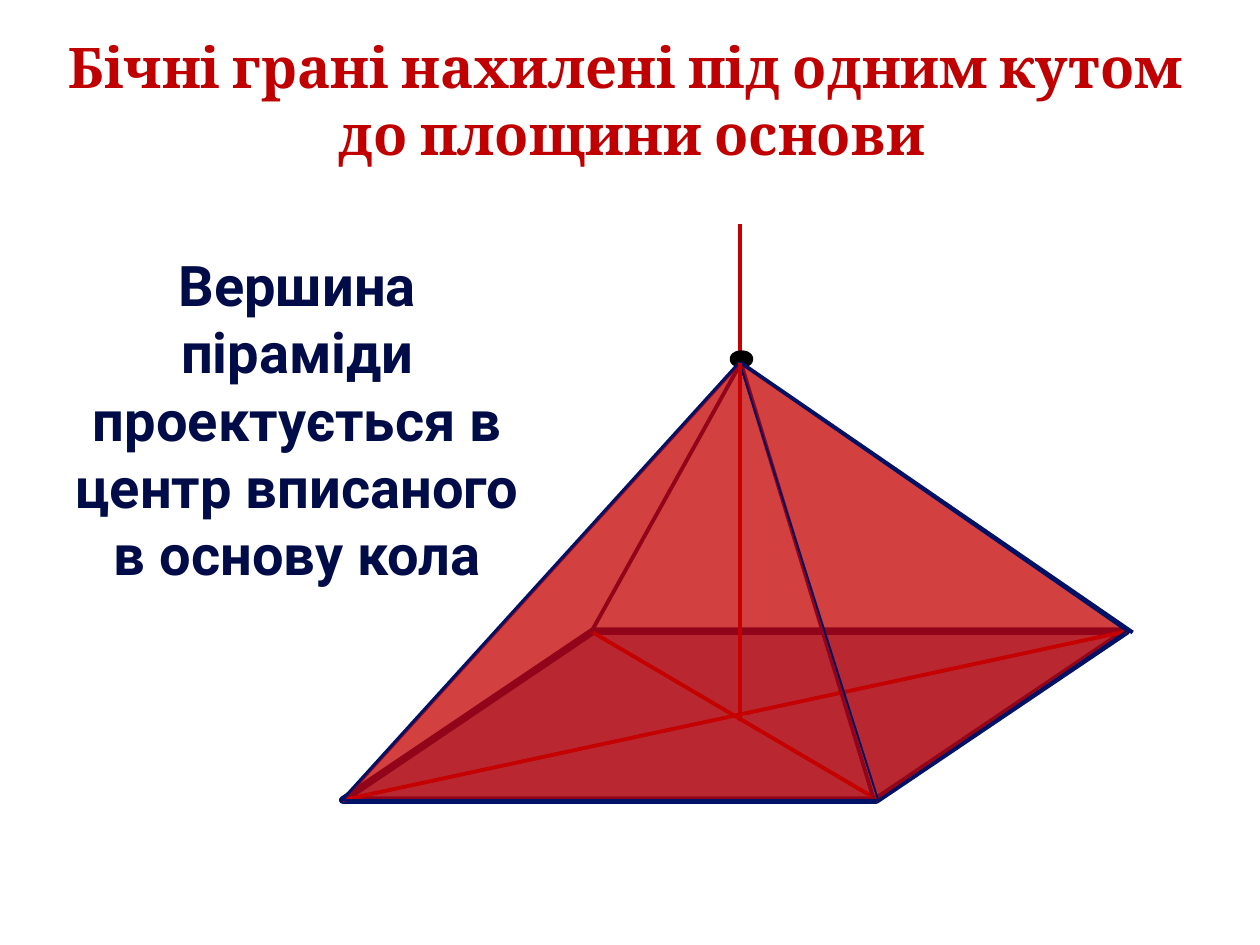
import pptx
import pptx.dml.color
import pptx.enum.shapes
import pptx.enum.text
import pptx.oxml
import pptx.oxml.ns
import pptx.util
from pptx.util import Inches

COLORS = {"title": "C00000", "text": "000C48", "edge": "001266",
          "face": "C40000", "point": "000000"}

# Corners of the pyramid, in inches
APEX = (5.87, 2.88)
FRONT_LEFT = (2.72, 6.35)
FRONT_RIGHT = (6.97, 6.35)
BACK_LEFT = (4.69, 5.01)
BACK_RIGHT = (8.94, 5.01)
CENTER = (5.87, 5.72)
AXIS_TOP = (5.87, 1.78)


def rgb(name):
    return pptx.dml.color.RGBColor.from_string(COLORS[name])


def set_line(shape, color, width):
    shape.line.color.rgb = rgb(color)
    shape.line.width = pptx.util.Pt(width)


def set_fill(shape, color, opacity=100):
    shape.shadow.inherit = False
    shape.fill.solid()
    shape.fill.fore_color.rgb = rgb(color)
    if opacity < 100:
        choice = shape.fill._xPr.find(".//" + pptx.oxml.ns.qn("a:srgbClr"))
        alpha = choice.makeelement(pptx.oxml.ns.qn("a:alpha"), {"val": str(opacity * 1000)})
        choice.append(alpha)


def write_text(box, lines, font_name, color):
    frame = box.text_frame
    frame.word_wrap = True
    frame.auto_size = pptx.enum.text.MSO_AUTO_SIZE.SHAPE_TO_FIT_TEXT
    frame.vertical_anchor = pptx.enum.text.MSO_ANCHOR.TOP
    frame.text = "\n".join(lines)
    for paragraph in frame.paragraphs:
        paragraph.alignment = pptx.enum.text.PP_ALIGN.CENTER
        for span in paragraph.runs:
            span.font.name = font_name
            span.font.size = pptx.util.Pt(32)
            span.font.bold = True
            span.font.color.rgb = rgb(color)


def add_title(page, lines):
    title = page.shapes.title
    title.left, title.top = Inches(0.43), Inches(0.21)
    title.width, title.height = Inches(9.17), Inches(1.18)
    write_text(title, lines, "Cambria", "title")


def add_segment(page, start, end, color):
    segment = page.shapes.add_connector(
        pptx.enum.shapes.MSO_CONNECTOR.STRAIGHT,
        *(Inches(value) for value in start + end))
    set_line(segment, color, 2.25)
    properties = segment._element.spPr
    properties.append(properties.makeelement(pptx.oxml.ns.qn("a:effectLst"), {}))


def add_preset(page, kind, left, top, width, height):
    shape = page.shapes.add_shape(
        kind, Inches(left), Inches(top), Inches(width), Inches(height))
    set_line(shape, "edge", 4.33)
    return shape


def add_base(page):
    base = add_preset(page, pptx.enum.shapes.MSO_SHAPE.PARALLELOGRAM,
                      2.72, 5.01, 6.22, 1.34)
    base.adjustments[0] = 1.482
    set_fill(base, "edge", 39)


def add_apex_point(page):
    point = add_preset(page, pptx.enum.shapes.MSO_SHAPE.OVAL, 5.82, 2.81, 0.13, 0.08)
    set_fill(point, "point")
    set_line(point, "point", 4.33)


def add_face(page, *corners):
    first, *others = [(Inches(x), Inches(y)) for x, y in corners]
    builder = page.shapes.build_freeform(*first)
    builder.add_line_segments(others, close=True)
    face = builder.convert_to_shape()
    set_fill(face, "face", 75)
    set_line(face, "edge", 1)


def add_pyramid(page):
    add_base(page)
    for start, end in ((FRONT_LEFT, BACK_RIGHT), (BACK_LEFT, FRONT_RIGHT),
                       (CENTER, AXIS_TOP)):
        add_segment(page, start, end, "face")
    add_apex_point(page)
    add_segment(page, FRONT_LEFT, APEX, "edge")
    for corner in ((4.69, 5.02), (8.99, 5.02), (6.94, 6.36)):
        add_segment(page, (5.88, 2.88), corner, "edge")
    add_face(page, APEX, FRONT_LEFT, FRONT_RIGHT)
    add_face(page, APEX, FRONT_RIGHT, BACK_RIGHT)
    add_segment(page, CENTER, APEX, "face")


def add_statement(page, text):
    box = page.shapes.add_textbox(Inches(0.35), Inches(1.94), Inches(4.02), Inches(1.72))
    write_text(box, [text], "Roboto", "text")


def main():
    deck = pptx.Presentation()
    deck.slide_width, deck.slide_height = Inches(10), Inches(7.5)
    page = deck.slides.add_slide(deck.slide_layouts.get_by_name("Title Only"))
    add_title(page, ["Бічні грані нахилені під одним кутом ", "до площини основи"])
    add_pyramid(page)
    add_statement(page, "Вершина піраміди проектується в центр вписаного в основу кола")
    deck.save("out.pptx")


if __name__ == "__main__":
    main()
